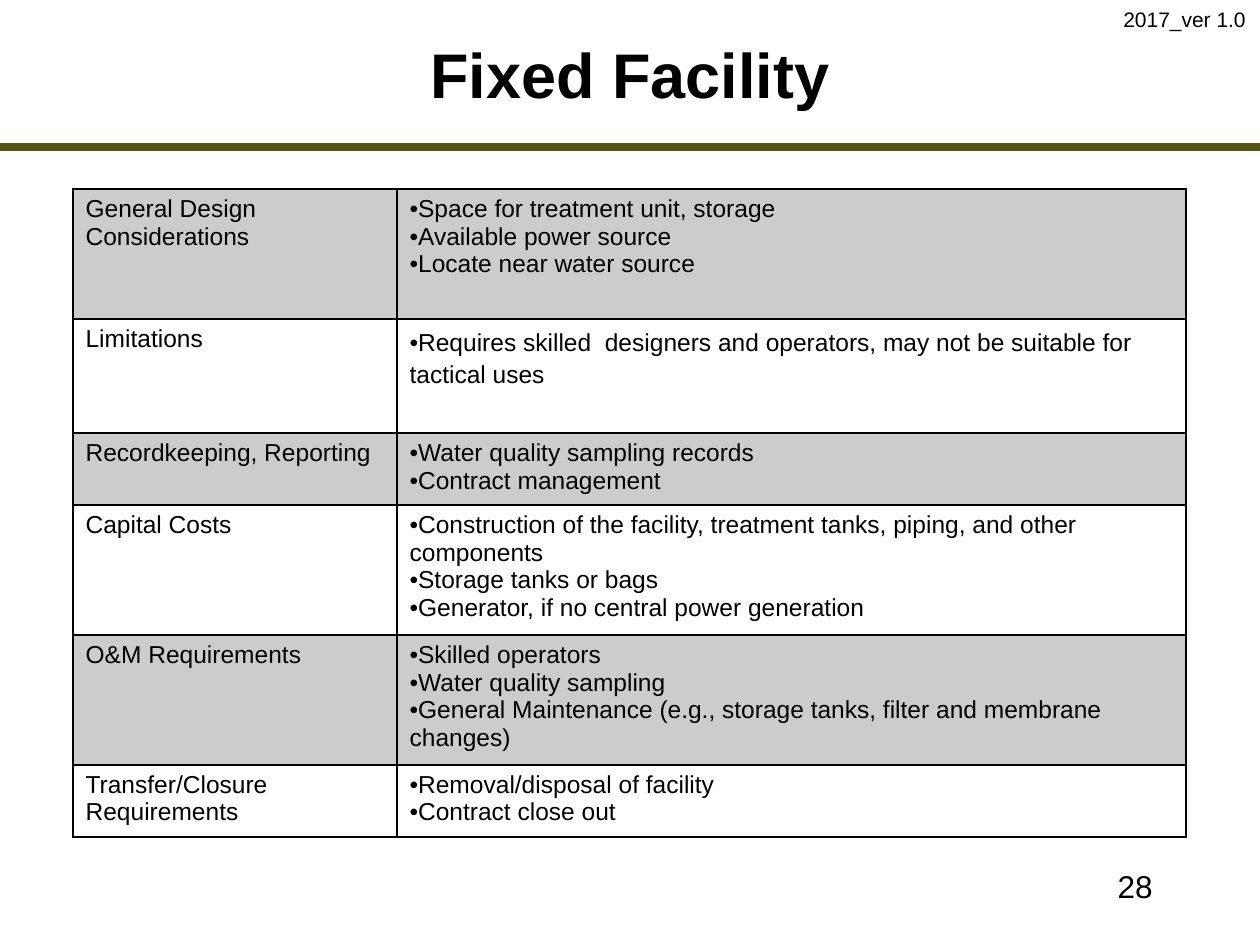
from lxml import etree
from pptx import Presentation
from pptx.dml.color import RGBColor
from pptx.enum.shapes import MSO_CONNECTOR
from pptx.enum.text import MSO_ANCHOR, MSO_AUTO_SIZE, PP_ALIGN
from pptx.oxml import parse_xml
from pptx.oxml.ns import nsdecls, qn
from pptx.util import Pt

STRAIGHT = MSO_CONNECTOR.STRAIGHT
TOP, MIDDLE = MSO_ANCHOR.TOP, MSO_ANCHOR.MIDDLE
LEFT, CENTER, RIGHT = PP_ALIGN.LEFT, PP_ALIGN.CENTER, PP_ALIGN.RIGHT
FIT_SHAPE, NO_FIT = MSO_AUTO_SIZE.SHAPE_TO_FIT_TEXT, MSO_AUTO_SIZE.NONE

SCALE = 914400 / 126  # EMU in one px
THEME = {
    "font": "Arial",
    "text": "000000",
    "rule": "545612",
    "border": "000000",
    "shade": "000000",
    "shade_alpha": 20000,
    "title_size": 36,
    "number_size": 18,
    "table_size": 14,
    "version_size": 12,
}


def px(length):
    return round(length * SCALE)


def set_font(paragraph, size, bold=False):
    values = {"name": THEME["font"], "size": Pt(size), "bold": bold}
    for run in paragraph.runs:
        for name, value in values.items():
            setattr(run.font, name, value)
        run.font.color.rgb = RGBColor.from_string(THEME["text"])


presentation = Presentation()
presentation.slide_width = px(1260)
presentation.slide_height = px(945)
slide = presentation.slides.add_slide(presentation.slide_layouts[6])

# Rule under the title
rule = slide.shapes.add_connector(STRAIGHT, px(0), px(147), px(1260), px(147))
rule.line.color.rgb = RGBColor.from_string(THEME["rule"])
rule.line.width = Pt(4.5)
etree.SubElement(rule._element.spPr, qn("a:effectLst"))

# Table of facility considerations
rows = [
    ("General Design Considerations", 130, [
        "Space for treatment unit, storage",
        "Available power source",
        "Locate near water source"]),
    ("Limitations", 114, [
        "Requires skilled  designers and operators, may not be suitable for tactical uses"]),
    ("Recordkeeping, Reporting", 72, [
        "Water quality sampling records",
        "Contract management"]),
    ("Capital Costs", 130, [
        "Construction of the facility, treatment tanks, piping, and other components",
        "Storage tanks or bags",
        "Generator, if no central power generation"]),
    ("O&M Requirements", 130, [
        "Skilled operators",
        "Water quality sampling",
        "General Maintenance (e.g., storage tanks, filter and membrane changes)"]),
    ("Transfer/Closure Requirements", 72, [
        "Removal/disposal of facility",
        "Contract close out"]),
]
column_widths = [324, 789]
table_height = sum(height for _, height, _ in rows)
table = slide.shapes.add_table(
    len(rows), len(column_widths), px(73), px(189), px(sum(column_widths)), px(table_height)
).table
table.first_row = False
table.horz_banding = False
for column, width in zip(table.columns, column_widths):
    column.width = px(width)

for row_index, (topic, height, points) in enumerate(rows):
    table.rows[row_index].height = px(height)
    for column_index, lines in enumerate([[topic], points]):
        cell = table.cell(row_index, column_index)
        cell.text = "\n".join(lines)
        for paragraph in cell.text_frame.paragraphs:
            if column_index == 1:
                properties = paragraph._p.get_or_add_pPr()
                etree.SubElement(properties, qn("a:buFont")).set("typeface", THEME["font"])
                etree.SubElement(properties, qn("a:buChar")).set("char", "•")
                if topic == "Limitations":
                    paragraph.line_spacing = 1.15
            set_font(paragraph, THEME["table_size"])

        # Alternate rows are shaded
        if row_index % 2 == 0:
            cell.fill.solid()
            cell.fill.fore_color.rgb = RGBColor.from_string(THEME["shade"])
            color = cell._tc.tcPr.find(".//" + qn("a:srgbClr"))
            etree.SubElement(color, qn("a:alpha")).set("val", str(THEME["shade_alpha"]))
        else:
            cell.fill.background()
        for position, side in enumerate(["lnL", "lnR", "lnT", "lnB"]):
            border = parse_xml(
                f'<a:{side} {nsdecls("a")} w="{Pt(1)}"><a:solidFill>'
                f'<a:srgbClr val="{THEME["border"]}"/></a:solidFill></a:{side}>')
            cell._tc.tcPr.insert(position, border)

# Title, page number and version
labels = [
    ("Fixed Facility", (147, 21, 966, 105), THEME["title_size"], True, CENTER,
     {"word_wrap": True, "vertical_anchor": MIDDLE, "auto_size": NO_FIT}),
    ("28", (903, 861, 262, 63), THEME["number_size"], False, RIGHT,
     {"word_wrap": True, "vertical_anchor": TOP, "auto_size": NO_FIT}),
    ("2017_ver 1.0", (1111, 0, 149, 38), THEME["version_size"], False, LEFT,
     {"word_wrap": False, "vertical_anchor": TOP, "auto_size": FIT_SHAPE}),
]
for text, box, size, bold, alignment, frame_format in labels:
    shape = slide.shapes.add_textbox(*map(px, box))
    for name, value in frame_format.items():
        setattr(shape.text_frame, name, value)
    paragraph = shape.text_frame.paragraphs[0]
    paragraph.text = text
    paragraph.alignment = alignment
    set_font(paragraph, size, bold)

presentation.save("out.pptx")
